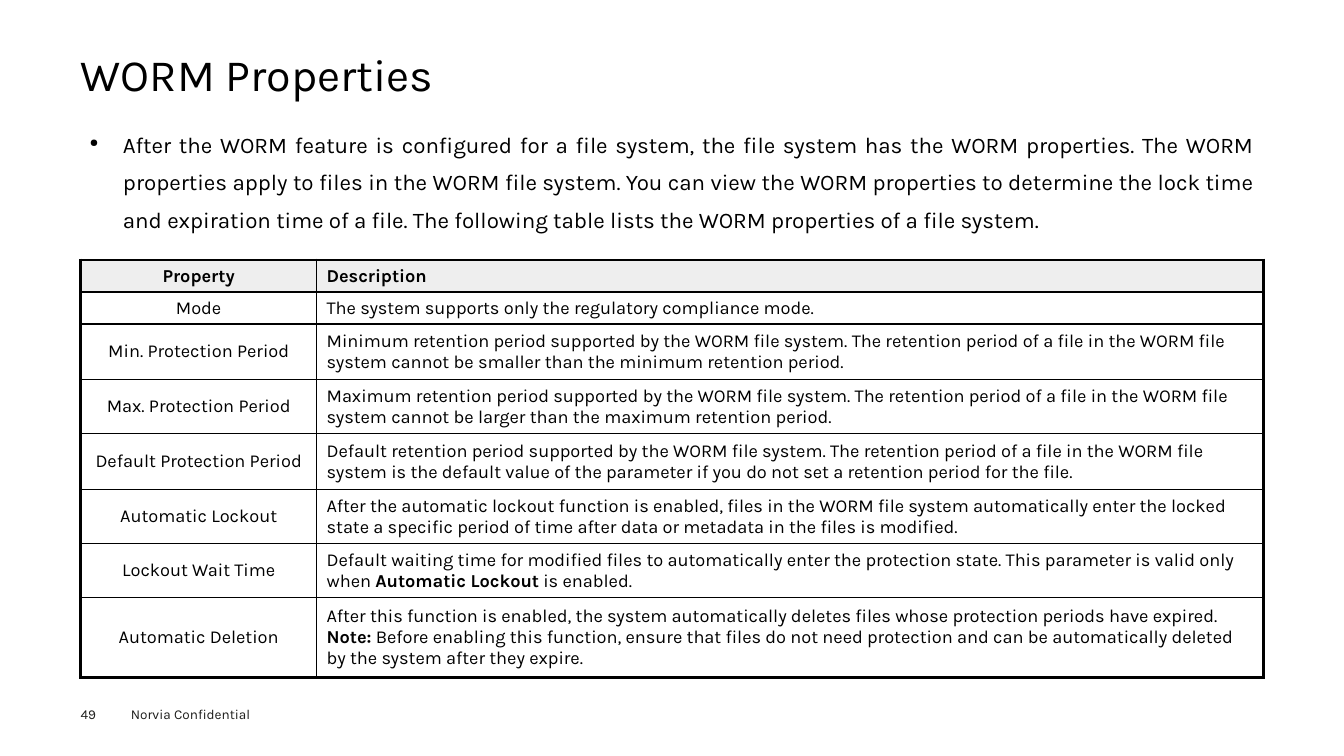
"""Build the WORM Properties slide."""
from lxml import etree
from pptx import Presentation
from pptx.dml.color import RGBColor
from pptx.enum.text import MSO_ANCHOR as ANCHOR, PP_ALIGN as ALIGN
from pptx.oxml.ns import qn
from pptx.util import Inches, Pt

TITLE = "WORM Properties"
INTRO = (
    "After the WORM feature is configured for a file system, the file system has the WORM "
    "properties. The WORM properties apply to files in the WORM file system. You can view the "
    "WORM properties to determine the lock time and expiration time of a file. The following "
    "table lists the WORM properties of a file system."
)
PAGE = "49"
FOOTER = "Norvia Confidential"
HEADER = ("Property", "Description")
PROPERTIES = [
    ("Mode", 0.31, [["The system supports only the regulatory compliance mode."]]),
    ("Min. Protection Period", 0.55, [[
        "Minimum retention period supported by the WORM file system. The retention period of a "
        "file in the WORM file system cannot be smaller than the minimum retention period."]]),
    ("Max. Protection Period", 0.54, [[
        "Maximum retention period supported by the WORM file system. The retention period of a "
        "file in the WORM file system cannot be larger than the maximum retention period."]]),
    ("Default Protection Period", 0.55, [[
        "Default retention period supported by the WORM file system. The retention period of a "
        "file in the WORM file system is the default value of the parameter if you do not set a "
        "retention period for the file."]]),
    ("Automatic Lockout", 0.54, [[
        "After the automatic lockout function is enabled, files in the WORM file system "
        "automatically enter the locked state a specific period of time after data or metadata "
        "in the files is modified."]]),
    ("Lockout Wait Time", 0.53, [[
        "Default waiting time for modified files to automatically enter the protection state. "
        "This parameter is valid only when ", ("Automatic Lockout",), " is enabled."]]),
    ("Automatic Deletion", 0.79, [
        ["After this function is enabled, the system automatically deletes files whose "
         "protection periods have expired."],
        [("Note:",), " Before enabling this function, ensure that files do not need protection "
         "and can be automatically deleted by the system after they expire."]]),
]

FONT = "Karla"
BLACK = RGBColor(0x00, 0x00, 0x00)
INK = RGBColor(0x1D, 0x1D, 0x1B)
GREY = RGBColor(0xEE, 0xEE, 0xEE)
LEFT, WIDTH = 0.8, 11.73
TABLE_TOP, HEADER_H = 2.58, 0.31
COLS = (2.34, 9.39)
THIN, THICK = 1, 2.25


def add_runs(p, runs, size, color=BLACK, bold=False):
    """Add plain strings as runs and one-item tuples as bold runs."""
    for part in runs:
        strong = isinstance(part, tuple)
        r = p.add_run()
        r.text = part[0] if strong else part
        r.font.color.rgb = color
        fmt = {"name": FONT, "size": Pt(size), "bold": bold or strong}
        for key, value in fmt.items():
            setattr(r.font, key, value)


def add_text(s, box, text, size, color=BLACK, insets=(0, 0), anchor=ANCHOR.TOP):
    """Add a one-paragraph text box and return the paragraph."""
    tf = s.shapes.add_textbox(*map(Inches, box)).text_frame
    side, end = map(Inches, insets)
    fmt = {"word_wrap": True, "vertical_anchor": anchor, "margin_left": side,
           "margin_right": side, "margin_top": end, "margin_bottom": end}
    for key, value in fmt.items():
        setattr(tf, key, value)
    p = tf.paragraphs[0]
    add_runs(p, [text], size, color)
    return p


def add_bullet(p, indent):
    """Give a paragraph a half-size round bullet with a hanging indent."""
    pPr = p._p.get_or_add_pPr()
    pPr.set("marL", str(Inches(indent)))
    pPr.set("indent", str(-Inches(indent)))
    etree.SubElement(pPr, qn("a:buSzPct")).set("val", "50000")
    etree.SubElement(pPr, qn("a:buChar")).set("char", "●")


def set_borders(cell, widths):
    """Draw the left, right, top and bottom borders of a cell."""
    tcPr = cell._tc.get_or_add_tcPr()
    for i, (side, width) in enumerate(zip("LRTB", widths)):
        ln = etree.Element(qn(f"a:ln{side}"), w=str(Pt(width)))
        fill = etree.SubElement(ln, qn("a:solidFill"))
        etree.SubElement(fill, qn("a:srgbClr")).set("val", str(BLACK))
        tcPr.insert(i, ln)


def add_properties(s):
    """Add the table with a thick frame and thin inner lines."""
    rows = [(HEADER[0], HEADER_H, [[HEADER[1]]])] + PROPERTIES
    last = len(rows) - 1
    height = sum(row[1] for row in rows)
    box = map(Inches, (LEFT, TABLE_TOP, WIDTH, height))
    table = s.shapes.add_table(len(rows), len(COLS), *box).table
    table.first_row = table.horz_banding = False
    for column, width in zip(table.columns, COLS):
        column.width = Inches(width)
    for i, (name, row_h, description) in enumerate(rows):
        table.rows[i].height = Inches(row_h)
        for j, paragraphs in enumerate(([[name]], description)):
            cell = table.cell(i, j)
            cell.vertical_anchor = ANCHOR.MIDDLE
            if i == 0:
                cell.fill.solid()
                cell.fill.fore_color.rgb = GREY
            else:
                cell.fill.background()
            edges = (j == 0, j == 1, i == 0, i == last)
            set_borders(cell, [THICK if edge else THIN for edge in edges])
            tf = cell.text_frame
            for k, runs in enumerate(paragraphs):
                p = tf.add_paragraph() if k else tf.paragraphs[0]
                p.alignment = ALIGN.LEFT if j else ALIGN.CENTER
                add_runs(p, runs, 13, bold=i == 0)


def main():
    """Lay out the slide and save it."""
    prs = Presentation()
    prs.slide_width, prs.slide_height = Inches(13.33), Inches(7.5)
    s = prs.slides.add_slide(prs.slide_layouts[6])
    add_text(s, (1.2, 6.95, 1.6, 0.27), FOOTER, 9.7, INK, (0.1, 0.05))
    add_text(s, (LEFT, 7, 0.55, 0.16), PAGE, 9.7, INK)
    title = add_text(s, (LEFT, 0.49, WIDTH, 0.54), TITLE, 32, anchor=ANCHOR.MIDDLE)
    title.line_spacing = 0.9
    intro = add_text(s, (LEFT, 1.15, WIDTH, 1.3), INTRO, 16, insets=(0.09, 0.04))
    add_bullet(intro, 0.33)
    intro.alignment = ALIGN.JUSTIFY
    intro.line_spacing = 1.4
    add_properties(s)
    prs.save("out.pptx")


if __name__ == "__main__":
    main()
